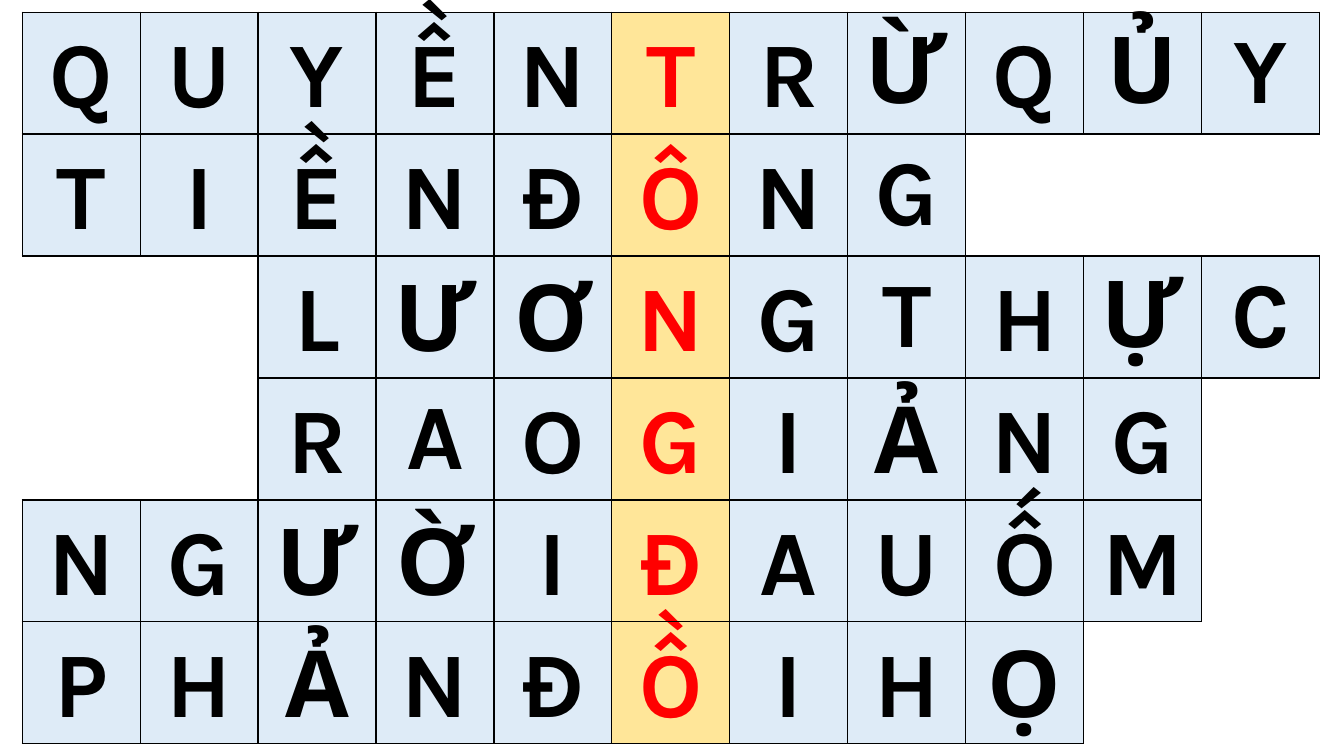
"""Build a Vietnamese crossword slide whose highlighted column spells the key word."""
from dataclasses import dataclass

from pptx import Presentation
from pptx import util as u
from pptx.dml import color
from pptx.enum import text
from pptx.oxml import ns, xmlchemy

COLORS = {"cell": "DEEBF7", "key": "FFE699", "blank": "FFFFFF",
          "letter": "000000", "key_letter": "FF0000", "border": "000000"}
COLS, KEY_COL = 11, 5
CELL_W, CELL_H = 1.17, 1.21
CELL_FORMAT = {"margin_left": u.Inches(0.07), "margin_right": u.Inches(0.07),
               "margin_top": 0, "margin_bottom": 0,
               "vertical_anchor": text.MSO_ANCHOR.MIDDLE}
FONT_FORMAT = {"name": "Karla", "size": u.Pt(66), "bold": True}
SPACED = {"line_spacing": 1.07, "space_after": u.Pt(8)}
SIDES = {"lnL": (0, -1), "lnR": (0, 1), "lnT": (-1, 0), "lnB": (1, 0)}


@dataclass(frozen=True)
class Word:
    letters: str
    start: int = 0
    single_spaced: tuple[int, ...] = ()

    def at(self, col: int) -> str:
        i = col - self.start
        return self.letters[i] if 0 <= i < len(self.letters) else ""


WORDS = [
    Word("QUYỀNTRỪQỦY", single_spaced=(7, 9, 10)),
    Word("TIỀNĐÔNG", single_spaced=(7,)),
    Word("LƯƠNGTHỰC", 2, (7, 9, 10)),
    Word("RAOGIẢNG", 2, (3,)),
    Word("NGƯỜIĐAUỐM"),
    Word("PHẢNĐỒIHỌ"),
]


def set_attrs(target: object, values: dict) -> None:
    for name, value in values.items():
        setattr(target, name, value)


def letter_at(row: int, col: int) -> str:
    return WORDS[row].at(col) if 0 <= row < len(WORDS) else ""


def draw_borders(cell, row: int, col: int) -> None:
    pr = cell._tc.get_or_add_tcPr()
    for tag, (dr, dc) in SIDES.items():
        ln = xmlchemy.OxmlElement(f"a:{tag}")
        pr.append(ln)
        if letter_at(row, col) or letter_at(row + dr, col + dc):
            ln.set("w", str(u.Pt(1)))
            fill = xmlchemy.OxmlElement("a:solidFill")
            rgb = xmlchemy.OxmlElement("a:srgbClr")
            rgb.set("val", COLORS["border"])
            fill.append(rgb)
            ln.append(fill)
        else:
            ln.set("w", "0")
            ln.append(ln.makeelement(ns.qn("a:noFill")))


def draw_cell(cell, row: int, col: int) -> None:
    letter = letter_at(row, col)
    kind = "blank" if not letter else "key" if col == KEY_COL else "cell"
    draw_borders(cell, row, col)
    cell.fill.solid()
    cell.fill.fore_color.rgb = color.RGBColor.from_string(COLORS[kind])
    set_attrs(cell, CELL_FORMAT)
    if not letter:
        return
    p = cell.text_frame.paragraphs[0]
    p.alignment = text.PP_ALIGN.CENTER
    if col not in WORDS[row].single_spaced:
        set_attrs(p, SPACED)
    r = p.add_run()
    r.text = letter
    set_attrs(r.font, FONT_FORMAT)
    ink = COLORS["key_letter" if kind == "key" else "letter"]
    r.font.color.rgb = color.RGBColor.from_string(ink)


def main() -> None:
    prs = Presentation()
    prs.slide_width, prs.slide_height = u.Inches(13.33), u.Inches(7.5)
    s = prs.slides.add_slide(prs.slide_layouts[6])
    table = s.shapes.add_table(
        len(WORDS), COLS, u.Inches(0.22), u.Inches(0.12),
        u.Inches(COLS * CELL_W), u.Inches(len(WORDS) * CELL_H)).table
    set_attrs(table, {"first_row": False, "horz_banding": False})
    for row in range(len(WORDS)):
        for col in range(COLS):
            draw_cell(table.cell(row, col), row, col)
    prs.save("out.pptx")


if __name__ == "__main__":
    main()
